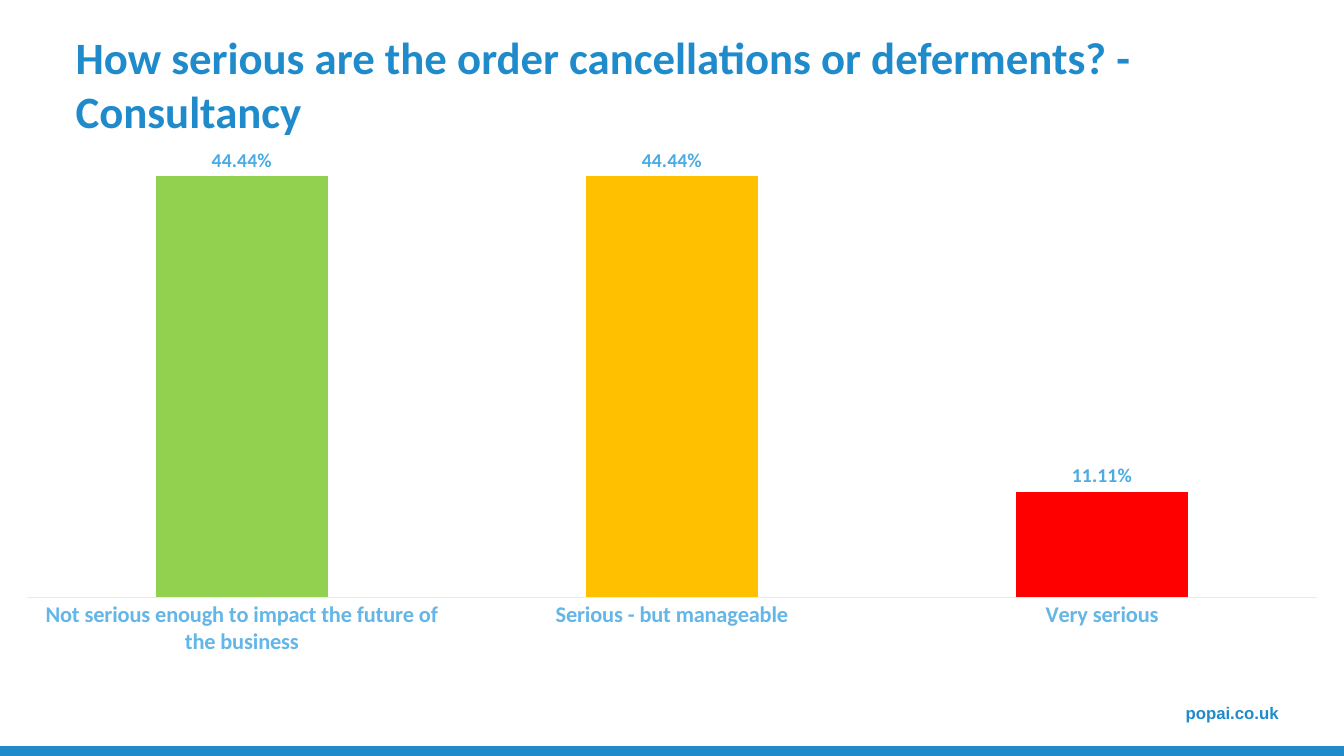
from pptx import Presentation
from pptx import util as u
from pptx.chart.data import CategoryChartData
from pptx.dml.color import RGBColor
from pptx.enum import chart as charts, shapes, text

COLOURS = {
    "brand": "1F8BCB",
    "category": "63B6E7",
    "value": "4BABE4",
    "baseline": "DBEEFA",
    "green": "92D050",
    "amber": "FFC000",
    "red": "FF0000",
}
ANSWERS = [
    ("Not serious enough to impact the future of the business", 0.4444, "green"),
    ("Serious - but manageable", 0.4444, "amber"),
    ("Very serious", 0.1111, "red"),
]


class SurveyPage:
    """Holds the style and the current slide, and adds each kind of element."""

    def __init__(self, deck):
        self.page = deck.slides.add_slide(deck.slide_layouts[5])

    def colour(self, name):
        return RGBColor.from_string(COLOURS[name])

    def fill(self, target, name):
        target.fill.solid()
        target.fill.fore_color.rgb = self.colour(name)

    def style(self, font, size, name, face="Calibri", bold=True):
        font.size = u.Pt(size)
        font.name = face
        font.bold = bold
        font.color.rgb = self.colour(name)

    def set_wording(self, box, wording, size, align, face="Calibri"):
        frame = box.text_frame
        frame.text = wording
        frame.word_wrap = True
        frame.auto_size = text.MSO_AUTO_SIZE.NONE
        frame.vertical_anchor = text.MSO_ANCHOR.MIDDLE
        para = frame.paragraphs[0]
        para.alignment = align
        self.style(para.runs[0].font, size, "brand", face)

    def title(self, wording, left, top, width, height):
        box = self.page.shapes.title
        box.left, box.top = u.Cm(left), u.Cm(top)
        box.width, box.height = u.Cm(width), u.Cm(height)
        self.set_wording(box, wording, 32, text.PP_ALIGN.LEFT)

    def footer(self, wording, left, top, width, height):
        box = self.page.shapes.add_textbox(u.Cm(left), u.Cm(top), u.Cm(width), u.Cm(height))
        self.set_wording(box, wording, 12, text.PP_ALIGN.RIGHT, "Arial")

    def band(self, left, top, width, height):
        band = self.page.shapes.add_shape(
            shapes.MSO_SHAPE.RECTANGLE, u.Cm(left), u.Cm(top), u.Cm(width), u.Cm(height))
        band.shadow.inherit = False
        self.fill(band, "brand")
        band.line.fill.background()

    def columns(self, answers, left, top, width, height):
        data = CategoryChartData(number_format="0.00%")
        data.categories = [label for label, _, _ in answers]
        data.add_series("Series 1", [value for _, value, _ in answers])
        chart = self.page.shapes.add_chart(
            charts.XL_CHART_TYPE.COLUMN_CLUSTERED,
            u.Cm(left), u.Cm(top), u.Cm(width), u.Cm(height), data).chart
        chart.has_legend = False
        chart.has_title = False
        self.style(chart.font, 10, "brand", bold=False)

        axis = chart.category_axis
        axis.major_tick_mark = charts.XL_TICK_MARK.NONE
        axis.format.line.color.rgb = self.colour("baseline")
        axis.format.line.width = u.Pt(0.75)
        self.style(axis.tick_labels.font, 16, "category")

        scale = chart.value_axis
        scale.minimum_scale, scale.maximum_scale = 0, 0.5
        scale.has_major_gridlines = False
        scale.visible = False

        plot = chart.plots[0]
        plot.gap_width, plot.overlap = 150, -25
        plot.vary_by_categories = False
        plot.has_data_labels = True
        labels = plot.data_labels
        labels.show_value = True
        labels.number_format = "0.00%"
        labels.number_format_is_linked = False
        labels.position = charts.XL_LABEL_POSITION.OUTSIDE_END
        self.style(labels.font, 14, "value")

        series = plot.series[0]
        self.fill(series.format, "brand")
        for index, (_, _, name) in enumerate(answers):
            self.fill(series.points[index].format, name)


def main():
    deck = Presentation()
    deck.slide_width, deck.slide_height = u.Cm(33.87), u.Cm(19.05)
    survey = SurveyPage(deck)
    survey.footer("popai.co.uk", 25.83, 17.58, 6.65, 0.76)
    survey.band(0, 18.8, 33.87, 0.41)
    survey.title("How serious are the order cancellations or deferments? - Consultancy",
                 1.65, 1.37, 32.2, 1.47)
    survey.columns(ANSWERS, 0, 2.84, 33.87, 13.97)
    deck.save("out.pptx")


if __name__ == "__main__":
    main()
